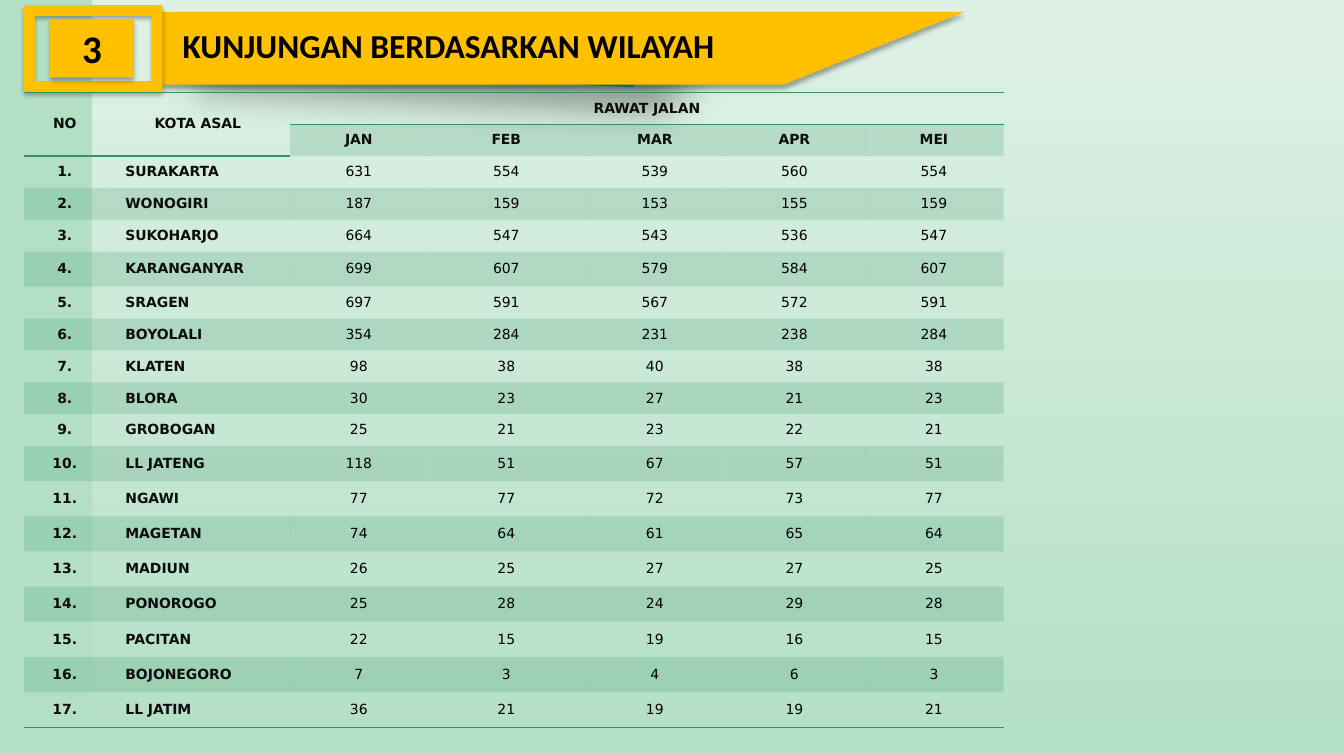
from lxml.etree import SubElement
from pptx import Presentation
from pptx.dml.color import RGBColor
from pptx.enum.shapes import MSO_SHAPE
from pptx.enum.text import MSO_ANCHOR, PP_ALIGN
from pptx.oxml.ns import qn
from pptx.util import Pt

COLORS = {"mint": "B3E0C5", "white": "FFFFFF", "teal": "1B91A1", "gold": "FFC000",
          "green": "389066", "ink": "0C0C0C", "black": "000000"}
NO_STYLE = "{2D5ABB26-0587-4C30-8999-92F81FD0307C}"
MONTHS = ["JAN", "FEB", "MAR", "APR", "MEI"]
VISITS = [
    ("SURAKARTA", 631, 554, 539, 560, 554),
    ("WONOGIRI", 187, 159, 153, 155, 159),
    ("SUKOHARJO", 664, 547, 543, 536, 547),
    ("KARANGANYAR", 699, 607, 579, 584, 607),
    ("SRAGEN", 697, 591, 567, 572, 591),
    ("BOYOLALI", 354, 284, 231, 238, 284),
    ("KLATEN", 98, 38, 40, 38, 38),
    ("BLORA", 30, 23, 27, 21, 23),
    ("GROBOGAN", 25, 21, 23, 22, 21),
    ("LL JATENG", 118, 51, 67, 57, 51),
    ("NGAWI", 77, 77, 72, 73, 77),
    ("MAGETAN", 74, 64, 61, 65, 64),
    ("MADIUN", 26, 25, 27, 27, 25),
    ("PONOROGO", 25, 28, 24, 29, 28),
    ("PACITAN", 22, 15, 19, 16, 15),
    ("BOJONEGORO", 7, 3, 4, 6, 3),
    ("LL JATIM", 36, 21, 19, 19, 21),
]


def write_text(frame, text, font="DejaVu Sans", size=10, color="ink", bold=True,
               align=PP_ALIGN.CENTER):
    para = frame.paragraphs[0]
    para.alignment = align
    span = para.add_run()
    span.text = text
    span.font.name = font
    span.font.size = Pt(size)
    span.font.bold = bold
    span.font.color.rgb = RGBColor.from_string(COLORS[color])


def paint(shape, color, opacity=32, blur=3.5, distance=2.2, angle=90):
    """Give a shape a plain fill, no outline and a soft shadow."""
    shape.fill.solid()
    shape.fill.fore_color.rgb = RGBColor.from_string(COLORS[color])
    shape.line.fill.background()
    shape.shadow.inherit = False
    effects = shape._element.spPr.find(qn("a:effectLst"))
    shadow = SubElement(effects, qn("a:outerShdw"), blurRad=str(Pt(blur)),
                        dist=str(Pt(distance)), dir=str(angle * 60000),
                        algn="ctr", rotWithShape="0")
    tint = SubElement(shadow, qn("a:srgbClr"), val=COLORS["black"])
    SubElement(tint, qn("a:alpha"), val=str(opacity * 1000))


deck = Presentation()
deck.slide_width, deck.slide_height = Pt(964), Pt(540)
page = deck.slides.add_slide(deck.slide_layouts[5])
page.background.fill.solid()
page.background.fill.fore_color.rgb = RGBColor.from_string(COLORS["mint"])

# White veil that fades downwards
veil = page.shapes.add_shape(MSO_SHAPE.RECTANGLE, Pt(66), 0, Pt(898), Pt(540))
veil.shadow.inherit = False
veil.line.fill.background()
veil.fill.gradient()
veil.fill.gradient_angle = 270
for stop, opacity in zip(veil.fill.gradient_stops, (60, 0)):
    stop.color.rgb = RGBColor.from_string(COLORS["white"])
for tint, opacity in zip(veil._element.spPr.iter(qn("a:srgbClr")), (60, 0)):
    SubElement(tint, qn("a:alpha"), val=str(opacity * 1000))

# Heading ribbon
RIBBONS = [
    ([(124.5, 12.2), (481.7, 28.8), (481.7, 38.9), (453.6, 62.6), (123.1, 47.5)],
     "teal", {"opacity": 35, "blur": 25, "distance": 25, "angle": 45}),
    ([(115.9, 8.6), (691.6, 8.6), (562, 60.8), (115.9, 60.8)], "gold", {}),
]
for corners, color, shadow in RIBBONS:
    points = [(Pt(x), Pt(y)) for x, y in corners]
    outline = page.shapes.build_freeform(*points[0])
    outline.add_line_segments(points[1:], close=True)
    paint(outline.convert_to_shape(), color, **shadow)

# Section number
frame = page.shapes.add_shape(MSO_SHAPE.FRAME, Pt(17.3), Pt(3.6), Pt(99.2), Pt(62.4))
paint(frame, "gold")
badge = page.shapes.add_shape(MSO_SHAPE.RECTANGLE, Pt(36), Pt(13.9), Pt(60), Pt(41.6))
paint(badge, "gold")
badge.text_frame.vertical_anchor = MSO_ANCHOR.MIDDLE
write_text(badge.text_frame, "3", font="Calibri", size=28, color="black")

title = page.shapes.title
title.left, title.top, title.width, title.height = Pt(131), Pt(13.7), Pt(518), Pt(36.7)
title.text_frame.margin_left = 0
title.text_frame.vertical_anchor = MSO_ANCHOR.MIDDLE
write_text(title.text_frame, "KUNJUNGAN BERDASARKAN WILAYAH", font="Calibri", size=24,
           color="black", align=PP_ALIGN.LEFT)
page.shapes._spTree.append(title._element)

# Visits by city
rows = [["NO", "KOTA ASAL", "RAWAT JALAN", "", "", "", ""], ["", "", *MONTHS]]
rows += [[f"{number}.", *map(str, visit)] for number, visit in enumerate(VISITS, 1)]
widths = [58.3, 132.5, 98.6, 113, 100.1, 100.1, 100.1]
heights = [25.2 if index == 5 or index >= 11 else 22.8 for index in range(len(rows))]
table_frame = page.shapes.add_table(len(rows), len(widths), Pt(17.3), Pt(66.2),
                                    Pt(sum(widths)), Pt(sum(heights)))
table = table_frame.table
table.first_row = table.horz_banding = False
table._tbl.tblPr.find(qn("a:tableStyleId")).text = NO_STYLE
for column, width in zip(table.columns, widths):
    column.width = Pt(width)
for row, height in zip(table.rows, heights):
    row.height = Pt(height)
table.cell(0, 0).merge(table.cell(1, 0))
table.cell(0, 1).merge(table.cell(1, 1))
table.cell(0, 2).merge(table.cell(0, 6))

for row, texts in enumerate(rows):
    for column, text in enumerate(texts):
        cell = table.cell(row, column)
        is_value = row > 1 and column > 1
        cell.vertical_anchor = MSO_ANCHOR.MIDDLE
        cell.margin_left = cell.margin_right = Pt(0 if is_value else 14.4)
        cell.margin_top = cell.margin_bottom = Pt(0 if is_value else 5.6)
        if text:
            write_text(cell.text_frame, text, color="black" if is_value else "ink",
                       bold=not is_value,
                       align=PP_ALIGN.LEFT if row > 1 and column == 1 else PP_ALIGN.CENTER)

        properties = cell._tc.get_or_add_tcPr()
        edges = []
        if row == 0:
            edges = ["a:lnT", "a:lnB"]
        elif row == len(rows) - 1 or (row == 1 and column < 2):
            edges = ["a:lnB"]
        for edge in edges:
            line = SubElement(properties, qn(edge), w=str(Pt(1)))
            SubElement(SubElement(line, qn("a:solidFill")), qn("a:srgbClr"), val=COLORS["green"])

        if row % 2 and (row > 1 or column > 1):
            cell.fill.solid()
            cell.fill.fore_color.rgb = RGBColor.from_string(COLORS["green"])
            tint = properties.find(qn("a:solidFill")).find(qn("a:srgbClr"))
            SubElement(tint, qn("a:alpha"), val="20000")
        else:
            cell.fill.background()

deck.save("out.pptx")
